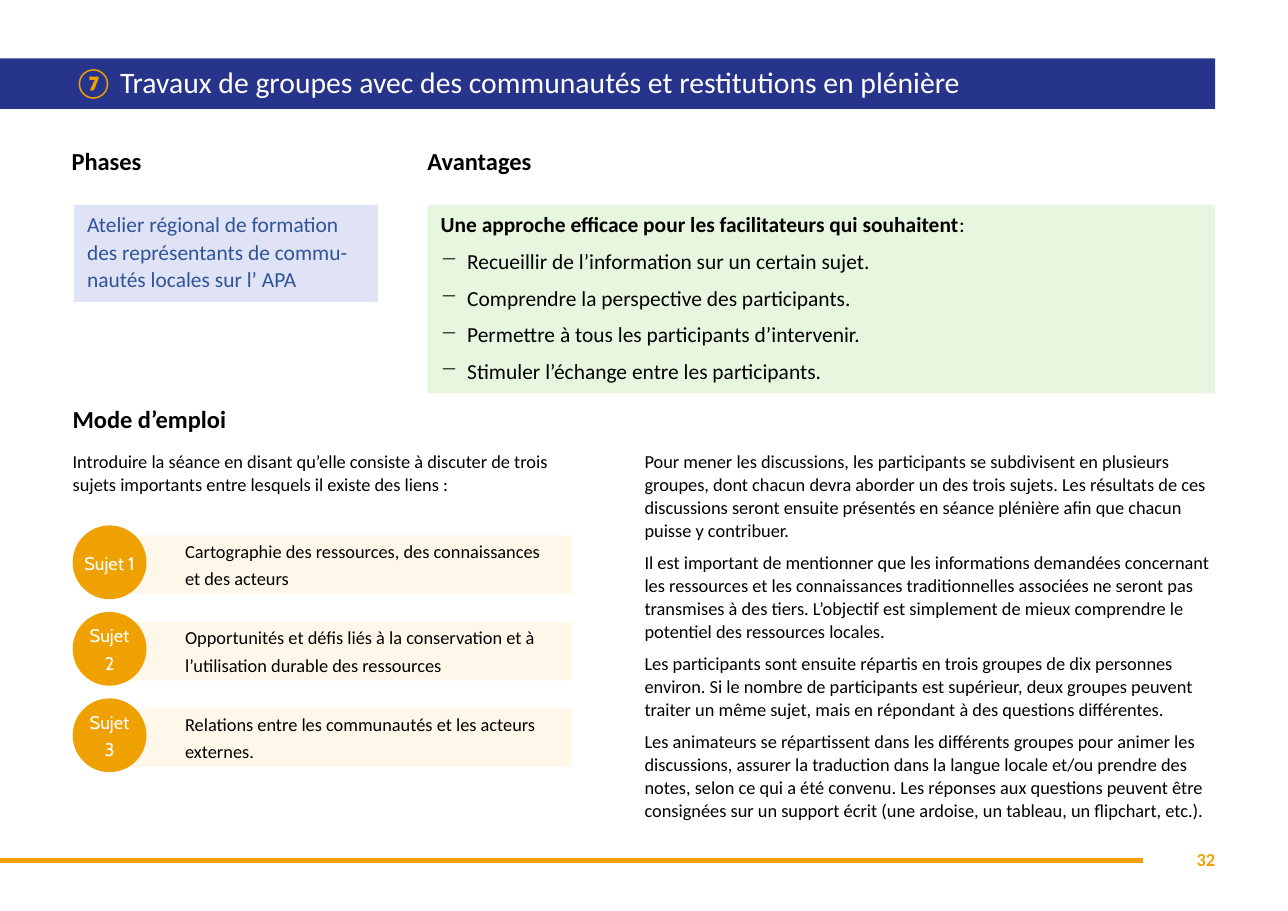
"""Build the slide on group work with communities and plenary feedback."""
from lxml.etree import SubElement
from pptx import Presentation
from pptx.dml.color import RGBColor
from pptx.enum.shapes import MSO_CONNECTOR, MSO_SHAPE
from pptx.enum.text import MSO_ANCHOR, PP_ALIGN
from pptx.oxml.ns import qn
from pptx.util import Inches, Pt

COLORS = {
    "gold": "EEA100", "navy": "27348B", "blue": "2F5496", "lilac": "E0E3F6",
    "green": "DEF3D2", "cream": "FFEDC9", "black": "000000", "white": "FFFFFF",
}
PAD = (0.12, 0.04, 0.12, 0.08)


def color(name):
    return RGBColor.from_string(COLORS[name])


def write(shape, paras, size=12, ink="black", bold=False, face="Calibri",
          align=PP_ALIGN.LEFT, anchor=MSO_ANCHOR.TOP, pad=(0, 0, 0, 0),
          lead=None, after=0, dash=False):
    frame = shape.text_frame
    frame.word_wrap = True
    frame.vertical_anchor = anchor
    frame.margin_left, frame.margin_top, frame.margin_right, frame.margin_bottom = map(Inches, pad)
    for i, runs in enumerate(paras):
        para = frame.paragraphs[0] if i == 0 else frame.add_paragraph()
        para.alignment = align
        para.space_after = Pt(after)
        if lead:
            para.line_spacing = lead
        if dash and i:
            props = para._p.get_or_add_pPr()
            props.set("marL", str(Inches(0.24)))
            props.set("indent", str(Inches(-0.24)))
            SubElement(props, qn("a:buChar")).set("char", "−")
        for part in [runs] if isinstance(runs, str) else runs:
            words, look = (part, {}) if isinstance(part, str) else part
            run = para.add_run()
            run.text = words
            font = run.font
            font.name = face
            font.size = Pt(size)
            font.bold = look.get("bold", bold)
            font.color.rgb = color(look.get("ink", ink))


class Page:
    """Hold the style and the current slide."""

    def __init__(self, deck):
        self.slide = deck.slides.add_slide(deck.slide_layouts[6])
        self.shapes = self.slide.shapes

    def text(self, box, paras, **look):
        shape = self.shapes.add_textbox(*map(Inches, box))
        write(shape, paras, **look)

    def head(self, left, top, words):
        self.text((left, top, 3.5, 0.32), [words], size=16, bold=True, lead=0.9)

    def block(self, box, fill, paras, kind=MSO_SHAPE.RECTANGLE, alpha=100, **look):
        shape = self.shapes.add_shape(kind, *map(Inches, box))
        shape.shadow.inherit = False
        shape.fill.solid()
        shape.fill.fore_color.rgb = color(fill)
        shape.line.fill.background()
        if alpha < 100:
            tone = shape.fill._xPr.find(qn("a:solidFill"))[0]
            SubElement(tone, qn("a:alpha")).set("val", str(alpha * 1000))
        write(shape, paras, **look)

    def rule(self, left, right, y):
        line = self.shapes.add_connector(
            MSO_CONNECTOR.STRAIGHT, Inches(left), Inches(y), Inches(right), Inches(y))
        line.line.color.rgb = color("gold")
        line.line.width = Pt(3)
        SubElement(line._element.spPr, qn("a:effectLst"))

    def topic(self, top, label, words):
        self.block((0.89, top + 0.09, 4.3, 0.53), "cream", [words], alpha=40,
                   anchor=MSO_ANCHOR.MIDDLE, pad=(0.79, 0.08, 0.17, 0.13), lead=Pt(18))
        self.block((0.66, top, 0.67, 0.67), "gold", [label], kind=MSO_SHAPE.OVAL,
                   ink="white", face="Cabin", align=PP_ALIGN.CENTER,
                   anchor=MSO_ANCHOR.MIDDLE, pad=(0, 0.04, 0, 0.08), lead=Pt(18), after=6)


def main():
    deck = Presentation()
    deck.slide_width, deck.slide_height = Inches(11.69), Inches(8.27)
    page = Page(deck)

    page.rule(0, 10.37, 7.81)
    page.text((10.29, 7.7, 0.74, 0.2), ["32"], ink="gold", bold=True, align=PP_ALIGN.RIGHT)
    page.block((0, 0.53, 11.03, 0.46), "navy",
               [[("⑦", {"ink": "gold", "bold": True}),
                 " Travaux de groupes avec des communautés et restitutions en plénière"]],
               size=19.4, ink="white", anchor=MSO_ANCHOR.MIDDLE,
               pad=(0.67, 0.04, 0.39, 0.04), lead=0.9)

    page.head(0.65, 1.36, "Phases")
    page.block((0.67, 1.86, 2.76, 0.88), "lilac",
               ["Atelier régional de formation des représentants de commu-nautés locales sur l’ APA"],
               size=14, ink="blue", pad=PAD, lead=Pt(18))

    page.head(3.88, 1.36, "Avantages")
    page.block((3.88, 1.86, 7.15, 1.71), "green", [
        [("Une approche efficace pour les facilitateurs qui souhaitent", {"bold": True}), ":"],
        "Recueillir de l’information sur un certain sujet.",
        "Comprendre la perspective des participants.",
        "Permettre à tous les participants d’intervenir.",
        "Stimuler l’échange entre les participants.",
    ], alpha=70, size=14, pad=PAD, lead=Pt(18), after=6, dash=True)

    page.head(0.66, 3.7, "Mode d’emploi")
    page.text((0.66, 4.08, 4.64, 0.41), [
        "Introduire la séance en disant qu’elle consiste à discuter de trois sujets "
        "importants entre lesquels il existe des liens :",
    ], lead=Pt(15), after=6)

    topics = [
        "Cartographie des ressources, des connaissances et des acteurs",
        "Opportunités et défis liés à la conservation et à l’utilisation durable des ressources",
        "Relations entre les communautés et les acteurs externes.",
    ]
    for i, words in enumerate(topics):
        page.topic(4.77 + i * 0.785, f"Sujet {i + 1}", words)

    page.text((5.85, 4.08, 5.18, 3.4), [
        "Pour mener les discussions, les participants se subdivisent en plusieurs groupes, "
        "dont chacun devra aborder un des trois sujets. Les résultats de ces discussions "
        "seront ensuite présentés en séance plénière afin que chacun puisse y contribuer.",
        "Il est important de mentionner que les informations demandées concernant les "
        "ressources et les connaissances traditionnelles associées ne seront pas transmises "
        "à des tiers. L’objectif est simplement de mieux comprendre le potentiel des "
        "ressources locales.",
        "Les participants sont ensuite répartis en trois groupes de dix personnes environ. "
        "Si le nombre de participants est supérieur, deux groupes peuvent traiter un même "
        "sujet, mais en répondant à des questions différentes.",
        "Les animateurs se répartissent dans les différents groupes pour animer les "
        "discussions, assurer la traduction dans la langue locale et/ou prendre des notes, "
        "selon ce qui a été convenu. Les réponses aux questions peuvent être consignées sur "
        "un support écrit (une ardoise, un tableau, un flipchart, etc.).",
    ], lead=Pt(15), after=6)

    deck.save("out.pptx")


if __name__ == "__main__":
    main()
